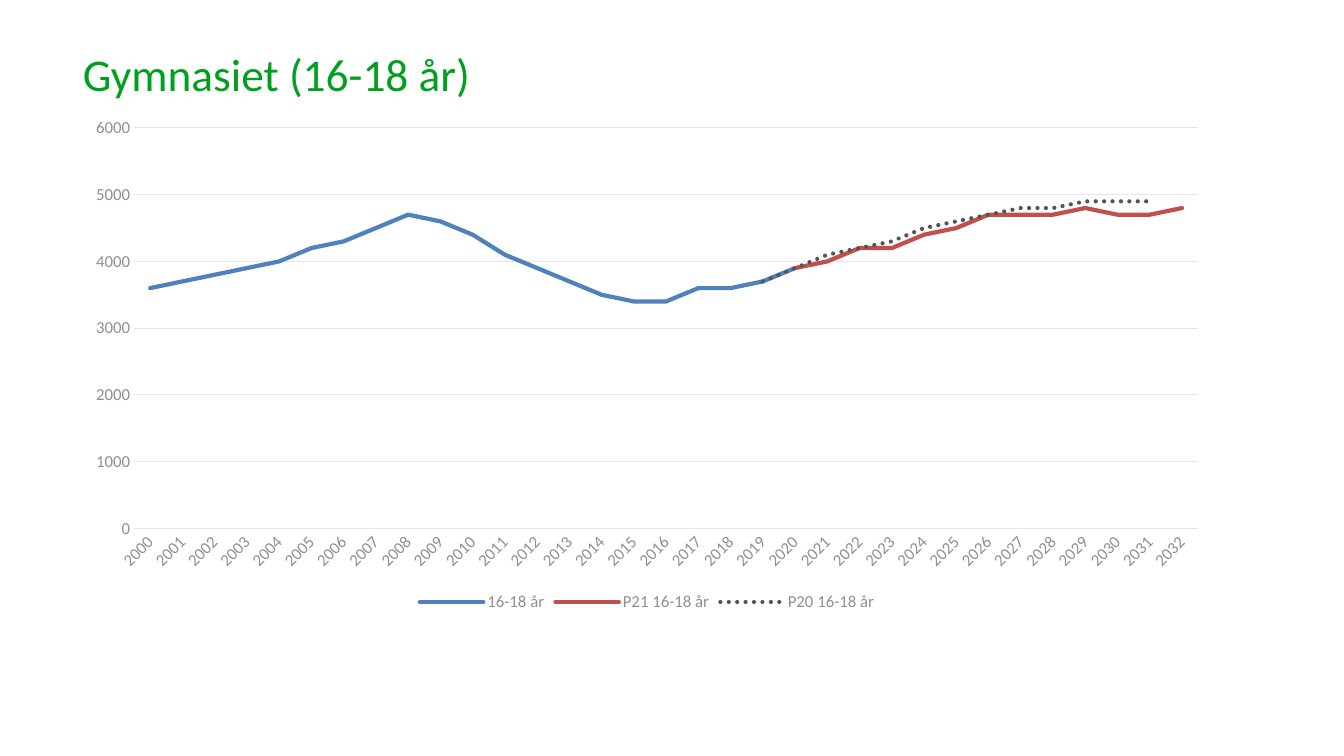
from dataclasses import dataclass
from typing import Optional

from pptx import Presentation
from pptx.chart.data import CategoryChartData
from pptx.chart.series import LineSeries
from pptx.dml.color import RGBColor
from pptx.enum.chart import XL_CHART_TYPE as ChartType
from pptx.enum.chart import XL_LEGEND_POSITION as LegendPosition
from pptx.enum.chart import XL_MARKER_STYLE as MarkerStyle
from pptx.enum.chart import XL_TICK_MARK as TickMark
from pptx.enum.dml import MSO_LINE as LineDash
from pptx.enum.text import MSO_ANCHOR as Anchor
from pptx.slide import Slide
from pptx.text.text import Font
from pptx.util import Pt

GREEN = RGBColor(0x00, 0xA0, 0x1E)
BLUE = RGBColor(0x4F, 0x81, 0xBD)
RED = RGBColor(0xC0, 0x50, 0x4D)
DARK_GREY = RGBColor(0x55, 0x55, 0x55)
LABEL_GREY = RGBColor(0x90, 0x90, 0x90)
GRID_GREY = RGBColor(0xE6, 0xE6, 0xE6)

FONT_NAME = "Calibri"
FIRST_YEAR, LAST_YEAR = 2000, 2032
LEFT, WIDTH = Pt(52.2), Pt(820)


@dataclass(frozen=True)
class PupilSeries:
    name: str
    start_year: int
    counts: list[int]
    color: RGBColor
    dash: Optional[LineDash] = None

    def values(self) -> list[Optional[int]]:
        by_year = dict(enumerate(self.counts, self.start_year))
        return [by_year.get(year) for year in range(FIRST_YEAR, LAST_YEAR + 1)]


PUPIL_SERIES = [
    PupilSeries("16-18 år", 2000,
                [3600, 3700, 3800, 3900, 4000, 4200, 4300, 4500, 4700, 4600, 4400,
                 4100, 3900, 3700, 3500, 3400, 3400, 3600, 3600, 3700, 3900], BLUE),
    PupilSeries("P21 16-18 år", 2020,
                [3900, 4000, 4200, 4200, 4400, 4500, 4700, 4700, 4700, 4800, 4700,
                 4700, 4800], RED),
    PupilSeries("P20 16-18 år", 2019,
                [3700, 3900, 4100, 4200, 4300, 4500, 4600, 4700, 4800, 4800, 4900,
                 4900, 4900], DARK_GREY, LineDash.ROUND_DOT),
]


def style_font(font: Font, size: float, color: RGBColor) -> None:
    font.name = FONT_NAME
    font.size = Pt(size)
    font.color.rgb = color


def style_series(series: LineSeries, pupils: PupilSeries) -> None:
    series.smooth = False
    series.marker.style = MarkerStyle.NONE
    line = series.format.line
    line.color.rgb = pupils.color
    line.width = Pt(3)
    if pupils.dash is not None:
        line.dash_style = pupils.dash
    for outline in series._element.xpath("c:spPr/a:ln"):
        outline.set("cap", "rnd")


def add_title(slide: Slide, text: str) -> None:
    frame = slide.shapes.add_textbox(LEFT, Pt(30.2), WIDTH, Pt(44.6)).text_frame
    frame.word_wrap = True
    frame.vertical_anchor = Anchor.MIDDLE
    run = frame.paragraphs[0].add_run()
    run.text = text
    style_font(run.font, 32.4, GREEN)


def add_pupil_chart(slide: Slide) -> None:
    data = CategoryChartData(number_format="0")
    data.categories = [str(year) for year in range(FIRST_YEAR, LAST_YEAR + 1)]
    for pupils in PUPIL_SERIES:
        data.add_series(pupils.name, pupils.values())

    chart = slide.shapes.add_chart(
        ChartType.LINE, LEFT, Pt(77), WIDTH, Pt(363), data).chart
    style_font(chart.font, 10, DARK_GREY)
    chart.has_title = False
    chart.has_legend = True
    chart.legend.position = LegendPosition.BOTTOM
    chart.legend.include_in_layout = False
    style_font(chart.legend.font, 12, LABEL_GREY)

    plot = chart.plots[0]
    plot.vary_by_categories = False
    for series, pupils in zip(plot.series, PUPIL_SERIES):
        style_series(series, pupils)

    years, counts = chart.category_axis, chart.value_axis
    for axis in (years, counts):
        axis.major_tick_mark = TickMark.NONE
        axis.minor_tick_mark = TickMark.NONE
        style_font(axis.tick_labels.font, 12, LABEL_GREY)
    years._element.txPr.bodyPr.set("rot", "-2700000")

    counts.minimum_scale = 0
    counts.maximum_scale = 6000
    counts.major_unit = 1000
    counts.has_major_gridlines = True
    counts.tick_labels.number_format = "0"
    counts.tick_labels.number_format_is_linked = False
    counts.format.line.fill.background()
    for line in (years.format.line, counts.major_gridlines.format.line):
        line.color.rgb = GRID_GREY
        line.width = Pt(0.75)


def main() -> None:
    presentation = Presentation()
    presentation.slide_width = Pt(960)
    presentation.slide_height = Pt(540)
    slide = presentation.slides.add_slide(presentation.slide_layouts[6])
    add_title(slide, "Gymnasiet (16-18 år)")
    add_pupil_chart(slide)
    presentation.save("out.pptx")


if __name__ == "__main__":
    main()
